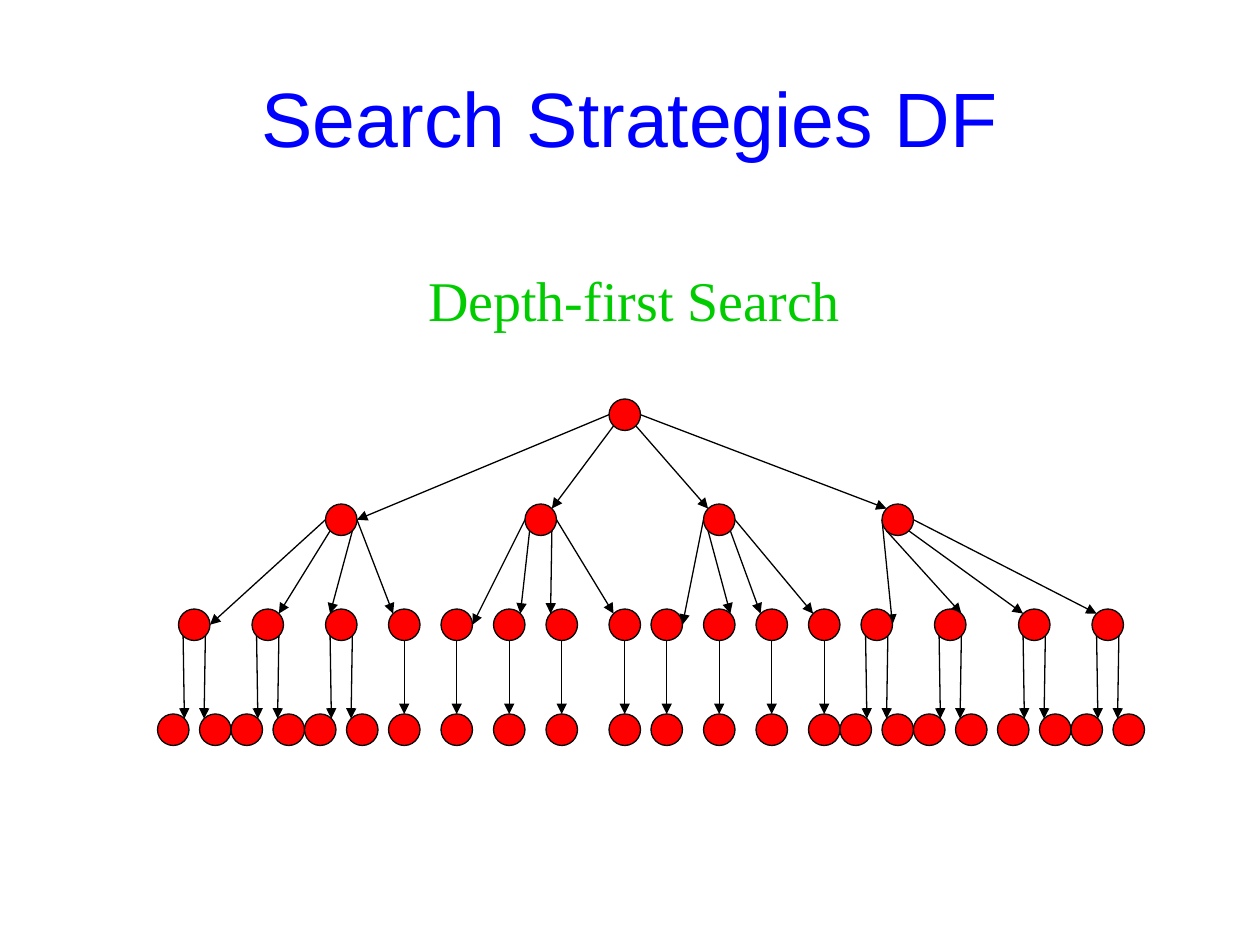
from dataclasses import dataclass
from math import sqrt

from pptx import Presentation
from pptx import util as u
from pptx.dml.color import RGBColor
from pptx.enum import shapes, text
from pptx.oxml.ns import qn
from lxml import etree


@dataclass(frozen=True)
class Theme:
    title_color: RGBColor = RGBColor(0x00, 0x00, 0xFF)
    subtitle_color: RGBColor = RGBColor(0x00, 0xCC, 0x00)
    node_color: RGBColor = RGBColor(0xFF, 0x00, 0x00)
    line_color: RGBColor = RGBColor(0x00, 0x00, 0x00)
    title_font: str = "Arial"
    subtitle_font: str = "Times New Roman"
    title_size: int = 44
    subtitle_size: int = 32
    line_width: float = 0.75


# The tree stands on a grid of twelfths of an inch; nodes are (left, top) on it.
GRID = 1 / 12
NODE_SIZE = 3
LEVEL_TOPS = [38, 48, 58, 68]
ROOT_LEFT = 58
BRANCH_LEFTS = [31, 50, 67, 84]
TWIG_LEFTS = [17, 24, 31, 37, 42, 47, 52, 58, 62, 67, 72, 77, 82, 89, 97, 104]
FORKED_TWIGS = {17, 24, 31, 82, 89, 97, 104}
FORK_OFFSET = 2

# Points on a node's rim, in radii from its centre.
DIAGONAL = sqrt(0.5)
RIM = {
    "left": (-1, 0), "right": (1, 0), "top": (0, -1), "bottom": (0, 1),
    "top left": (-DIAGONAL, -DIAGONAL), "top right": (DIAGONAL, -DIAGONAL),
    "bottom left": (-DIAGONAL, DIAGONAL), "bottom right": (DIAGONAL, DIAGONAL),
}
# Start and end rim point of each arrow, by the number of children.
ARROW_ENDS = {
    1: [("bottom", "top")],
    2: [("bottom left", "top right"), ("bottom right", "top left")],
    4: [("left", "right"), ("bottom left", "top right"),
        ("bottom right", "top left"), ("right", "top left")],
}


class SlideBuilder:
    def __init__(self, slide, theme):
        self.slide = slide
        self.theme = theme

    def format_text(self, frame, font_name, size, color):
        for paragraph in frame.paragraphs:
            paragraph.alignment = text.PP_ALIGN.CENTER
            for run in paragraph.runs:
                run.font.name = font_name
                run.font.size = u.Pt(size)
                run.font.color.rgb = color

    def title(self, wording, left, top, width, height):
        shape = self.slide.shapes.title
        shape.left, shape.top = u.Inches(left), u.Inches(top)
        shape.width, shape.height = u.Inches(width), u.Inches(height)
        shape.text_frame.text = wording
        shape.text_frame.vertical_anchor = text.MSO_ANCHOR.MIDDLE
        self.format_text(shape.text_frame, self.theme.title_font,
                         self.theme.title_size, self.theme.title_color)

    def subtitle(self, wording, left, top, width, height):
        shape = self.slide.shapes.add_textbox(
            u.Inches(left), u.Inches(top), u.Inches(width), u.Inches(height))
        frame = shape.text_frame
        frame.text = wording
        frame.word_wrap = False
        frame.auto_size = text.MSO_AUTO_SIZE.SHAPE_TO_FIT_TEXT
        self.format_text(frame, self.theme.subtitle_font,
                         self.theme.subtitle_size, self.theme.subtitle_color)

    def node(self, position):
        left, top = (u.Inches(value * GRID) for value in position)
        size = u.Inches(NODE_SIZE * GRID)
        shape = self.slide.shapes.add_shape(
            shapes.MSO_SHAPE.OVAL, left, top, size, size)
        shape.shadow.inherit = False
        shape.fill.solid()
        shape.fill.fore_color.rgb = self.theme.node_color
        shape.line.color.rgb = self.theme.line_color
        shape.line.width = u.Pt(self.theme.line_width)

    def arrow(self, parent, start, child, end):
        connector = self.slide.shapes.add_connector(
            shapes.MSO_CONNECTOR.STRAIGHT,
            *rim_point(parent, start), *rim_point(child, end))
        connector.line.color.rgb = self.theme.line_color
        connector.line.width = u.Pt(self.theme.line_width)
        properties = connector._element.spPr
        etree.SubElement(properties.find(qn("a:ln")), qn("a:tailEnd"),
                         type="triangle")
        etree.SubElement(properties, qn("a:effectLst"))


def rim_point(position, place):
    """Return x and y of a named rim point of the node at this grid position."""
    radius = NODE_SIZE / 2
    return [u.Inches((corner + radius + radius * offset) * GRID)
            for corner, offset in zip(position, RIM[place])]


def tree_families():
    """Return (parent, children) pairs from the root down."""
    root_top, branch_top, twig_top, leaf_top = LEVEL_TOPS
    branches = [(left, branch_top) for left in BRANCH_LEFTS]
    twigs = [(left, twig_top) for left in TWIG_LEFTS]
    families = [((ROOT_LEFT, root_top), branches)]
    for index, branch in enumerate(branches):
        families.append((branch, twigs[4 * index:4 * index + 4]))
    for twig in twigs:
        left = twig[0]
        offsets = (-FORK_OFFSET, FORK_OFFSET) if left in FORKED_TWIGS else (0,)
        families.append((twig, [(left + offset, leaf_top) for offset in offsets]))
    return families


def draw_tree(builder):
    """Draw leaves, then arrows, then inner nodes over the arrow starts."""
    families = tree_families()
    for _, children in families:
        for child in children:
            if child[1] == LEVEL_TOPS[-1]:
                builder.node(child)
    for parent, children in families:
        for child, (start, end) in zip(children, ARROW_ENDS[len(children)]):
            builder.arrow(parent, start, child, end)
    for parent, _ in families:
        builder.node(parent)


def main():
    presentation = Presentation()
    presentation.slide_width = u.Inches(10)
    presentation.slide_height = u.Inches(7.5)
    slide = presentation.slides.add_slide(presentation.slide_layouts[5])
    builder = SlideBuilder(slide, Theme())
    builder.title("Search Strategies DF", 0.5, 0.3, 9, 1.25)
    draw_tree(builder)
    builder.subtitle("Depth-first Search", 3.28, 2.06, 3.51, 0.63)
    presentation.save("out.pptx")


if __name__ == "__main__":
    main()
